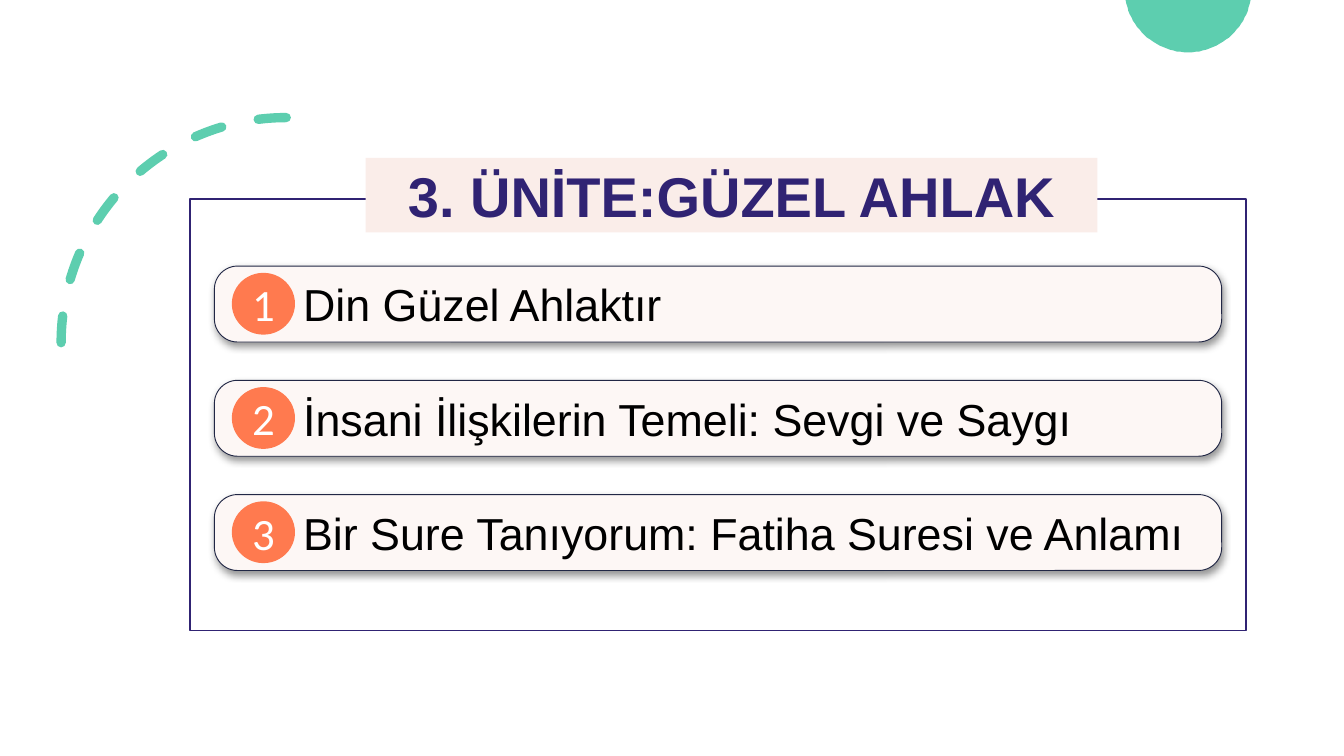
import math
from dataclasses import dataclass

import lxml.etree
import pptx
import pptx.dml.color
import pptx.enum.dml
import pptx.enum.shapes
import pptx.enum.text
import pptx.oxml
import pptx.oxml.ns
import pptx.util

PX = 9144  # EMU in one px, 100 px to the inch
KIND = pptx.enum.shapes.MSO_SHAPE
ALIGN = pptx.enum.text.PP_ALIGN
LESSONS = [
    "Din Güzel Ahlaktır",
    "İnsani İlişkilerin Temeli: Sevgi ve Saygı",
    "Bir Sure Tanıyorum: Fatiha Suresi ve Anlamı",
]


@dataclass(frozen=True)
class Theme:
    green: str = "5DCEAF"
    navy: str = "302373"
    edge: str = "212745"
    cream: str = "FDF7F5"
    blush: str = "FAEDE9"
    coral: str = "FF7A4F"
    black: str = "000000"
    white: str = "FFFFFF"
    head: int = 60
    body: int = 48
    sans: str = "Arial"
    digit: str = "Calibri"


THEME = Theme()


def rgb(code):
    return pptx.dml.color.RGBColor.from_string(code)


def paint(shape, fill=None, line=None, width=1):
    """Set fill and line, and clear the shadow."""
    if fill:
        shape.fill.solid()
        shape.fill.fore_color.rgb = rgb(fill)
    else:
        shape.fill.background()
    if line:
        shape.line.color.rgb = rgb(line)
        shape.line.width = pptx.util.Pt(width)
    else:
        shape.line.fill.background()
    shape.shadow.inherit = False


def add(slide, kind, box, **look):
    shape = slide.shapes.add_shape(kind, *(n * PX for n in box))
    paint(shape, **look)
    return shape


def trace(slide, points, **look):
    """Draw a closed outline through the points."""
    pen = slide.shapes.build_freeform(*points[0], scale=PX)
    pen.add_line_segments(points[1:], close=True)
    shape = pen.convert_to_shape()
    paint(shape, **look)
    return shape


def write(shape, text, size, font, color, align, bold=False):
    frame = shape.text_frame
    frame.word_wrap = True
    frame.vertical_anchor = pptx.enum.text.MSO_ANCHOR.MIDDLE
    para = frame.paragraphs[0]
    para.alignment = align
    run = para.add_run()
    run.text = text
    run.font.size = pptx.util.Pt(size)
    run.font.name = font
    run.font.bold = bold
    run.font.color.rgb = rgb(color)


def shade(shape):
    """Add a soft shadow below the shape."""
    effects = shape._element.spPr.find(pptx.oxml.ns.qn("a:effectLst"))
    effects.append(pptx.oxml.parse_xml(
        f'<a:outerShdw {pptx.oxml.ns.nsdecls("a")} blurRad="101600" '
        'dist="50800" dir="4800000" algn="t" rotWithShape="0">'
        f'<a:srgbClr val="{THEME.black}"><a:alpha val="42000"/></a:srgbClr>'
        '</a:outerShdw>'))


def draw_disc(slide, box):
    """Draw the part of a disc that hangs from the top edge."""
    left, top, width, depth = box
    half = width / 2
    radius = (half ** 2 + depth ** 2) / (2 * depth)
    start = math.asin((radius - depth) / radius)
    steps = 48
    points = []
    for step in range(steps + 1):
        angle = start + (math.pi - 2 * start) * step / steps
        points.append((round(left + half + radius * math.cos(angle)),
                       round(top + depth - radius + radius * math.sin(angle))))
    trace(slide, points, fill=THEME.green)


def draw_arc(slide, box):
    arc = add(slide, KIND.ARC, box, line=THEME.green, width=10)
    arc.line.dash_style = pptx.enum.dml.MSO_LINE.DASH
    arc.line._get_or_add_ln().set("cap", "rnd")
    arc._element.spPr.xfrm.set("flipH", "1")


def draw_frame(slide, box):
    """Draw the outline, with a notch where the title lies."""
    left, top, width, height = box
    right, base = left + width, top + height
    inset, notch = 263, 5
    trace(slide, [
        (left, top), (left + inset, top), (left + inset, top + notch),
        (right - inset, top + notch), (right - inset, top),
        (right, top), (right, base), (left, base),
    ], line=THEME.navy, width=1.5)


def place_title(slide, box, text):
    title = slide.shapes.title
    title.left, title.top, title.width, title.height = (n * PX for n in box)
    paint(title, fill=THEME.blush)
    title.text_frame.auto_size = pptx.enum.text.MSO_AUTO_SIZE.NONE
    write(title, text, THEME.head, THEME.sans, THEME.navy, ALIGN.CENTER, True)
    slide.shapes._spTree.append(title._element)  # bring in front of the frame


def draw_row(slide, box, number, text):
    left, top, width, height = box
    bar = add(slide, KIND.ROUNDED_RECTANGLE, box,
              fill=THEME.cream, line=THEME.edge)
    bar.adjustments[0] = 0.305
    shade(bar)
    bar.text_frame.margin_left = 122 * PX
    write(bar, text, THEME.body, THEME.sans, THEME.black, ALIGN.LEFT)
    badge = add(slide, KIND.OVAL, (left + 26, top + 10, 94, 92),
                fill=THEME.coral)
    write(badge, str(number), THEME.body, THEME.digit, THEME.white,
          ALIGN.CENTER)


def draw_list(slide, box, items):
    left, top, width, height = box
    bar = 113
    pitch = (height - bar) // (len(items) - 1)
    for index, text in enumerate(items):
        draw_row(slide, (left, top + index * pitch, width, bar),
                 index + 1, text)


def main():
    deck = pptx.Presentation()
    deck.slide_width, deck.slide_height = 2000 * PX, 1125 * PX
    slide = deck.slides.add_slide(deck.slide_layouts.get_by_name("Title Only"))
    draw_disc(slide, (1675, 0, 186, 78))
    draw_arc(slide, (91, 175, 670, 670))
    draw_frame(slide, (283, 296, 1571, 642))
    place_title(slide, (544, 235, 1089, 111), "3. ÜNİTE:GÜZEL AHLAK")
    draw_list(slide, (319, 396, 1499, 453), LESSONS)
    deck.save("out.pptx")


if __name__ == "__main__":
    main()
